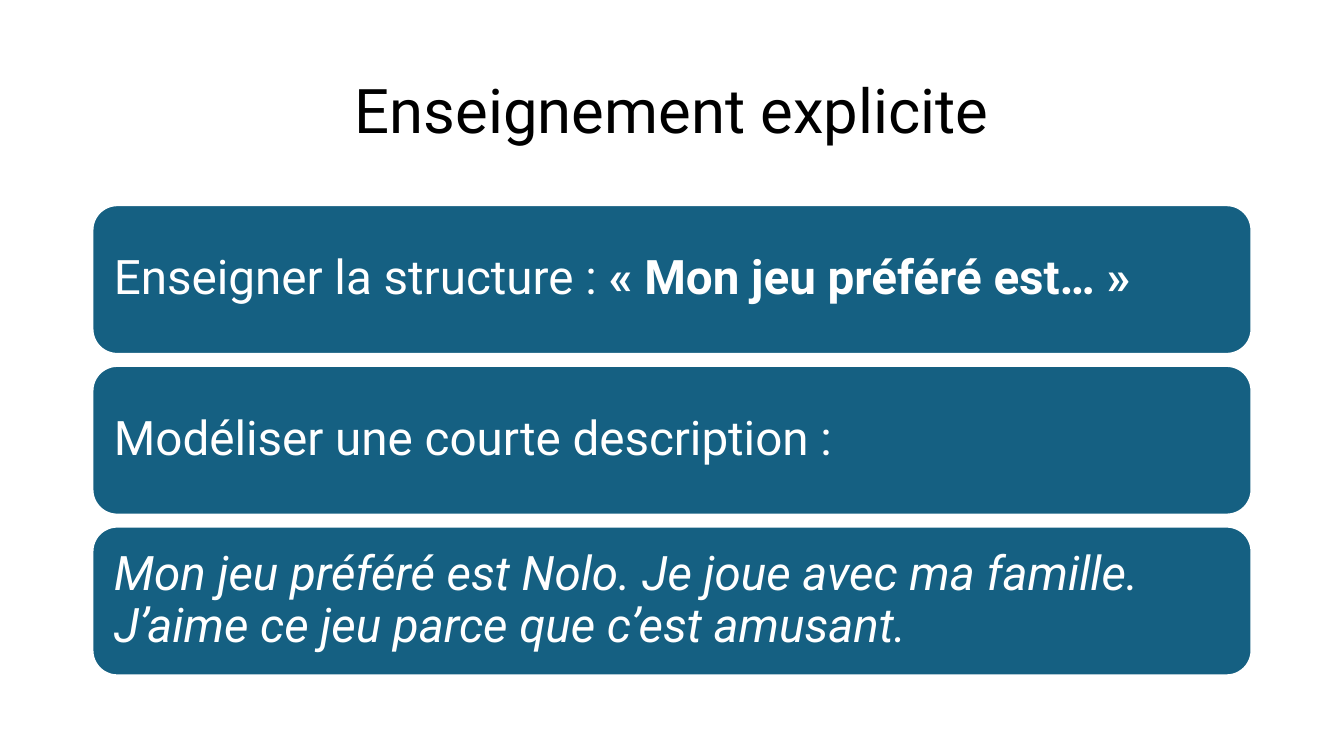
from pptx import Presentation
from pptx.dml.color import RGBColor
from pptx.enum.shapes import MSO_SHAPE
from pptx.enum.text import MSO_ANCHOR, PP_ALIGN
from pptx.util import Cm, Pt

ROUNDED = MSO_SHAPE.ROUNDED_RECTANGLE
MIDDLE = MSO_ANCHOR.MIDDLE
LEFT, CENTER = PP_ALIGN.LEFT, PP_ALIGN.CENTER

COLORS = {"title": "000000", "panel": "156082", "white": "FFFFFF"}
FONT = "Roboto"
TITLE_ONLY = 5

MARGIN, CONTENT_WIDTH = 2.33, 29.21
PANEL_TOP, PANEL_HEIGHT, PANEL_STEP = 5.17, 3.75, 4.05
PANEL_INSET = Cm(0.36)

# Each panel is a list of runs: text, bold, italic
STEPS = [
    [("Enseigner la structure : ", False, False),
     ("« Mon jeu préféré est… »", True, False)],
    [("Modéliser une courte description :", False, False)],
    [("Mon jeu préféré est Nolo. Je joue avec ma famille. "
      "J’aime ce jeu parce que c’est amusant.", False, True)],
]


def color(name):
    return RGBColor.from_string(COLORS[name])


def write_runs(frame, runs, size, color_name, align):
    """Fill the frame's first paragraph with runs, vertically centred."""
    frame.word_wrap = True
    frame.vertical_anchor = MIDDLE
    paragraph = frame.paragraphs[0]
    paragraph.alignment = align
    paragraph.line_spacing = 0.9
    for text, bold, italic in runs:
        run = paragraph.add_run()
        run.text = text
        run.font.name = FONT
        run.font.size = Pt(size)
        run.font.bold = bold
        run.font.italic = italic
        run.font.color.rgb = color(color_name)


def add_title(slide, text):
    title = slide.shapes.title
    title.left, title.top = Cm(MARGIN), Cm(1.01)
    title.width, title.height = Cm(CONTENT_WIDTH), Cm(3.68)
    write_runs(title.text_frame, [(text, False, False)], 44, "title", CENTER)


def add_panel(slide, top, runs):
    panel = slide.shapes.add_shape(
        ROUNDED, Cm(MARGIN), Cm(top), Cm(CONTENT_WIDTH), Cm(PANEL_HEIGHT))
    panel.shadow.inherit = False
    panel.fill.solid()
    panel.fill.fore_color.rgb = color("panel")
    panel.line.color.rgb = color("white")
    panel.line.width = Pt(1.5)
    frame = panel.text_frame
    frame.margin_left = frame.margin_right = PANEL_INSET
    frame.margin_top = frame.margin_bottom = PANEL_INSET
    write_runs(frame, runs, 34, "white", LEFT)


def main():
    deck = Presentation()
    deck.slide_width, deck.slide_height = Cm(33.87), Cm(19.05)
    slide = deck.slides.add_slide(deck.slide_layouts[TITLE_ONLY])
    add_title(slide, "Enseignement explicite")
    for index, runs in enumerate(STEPS):
        add_panel(slide, PANEL_TOP + index * PANEL_STEP, runs)
    deck.save("out.pptx")


if __name__ == "__main__":
    main()
